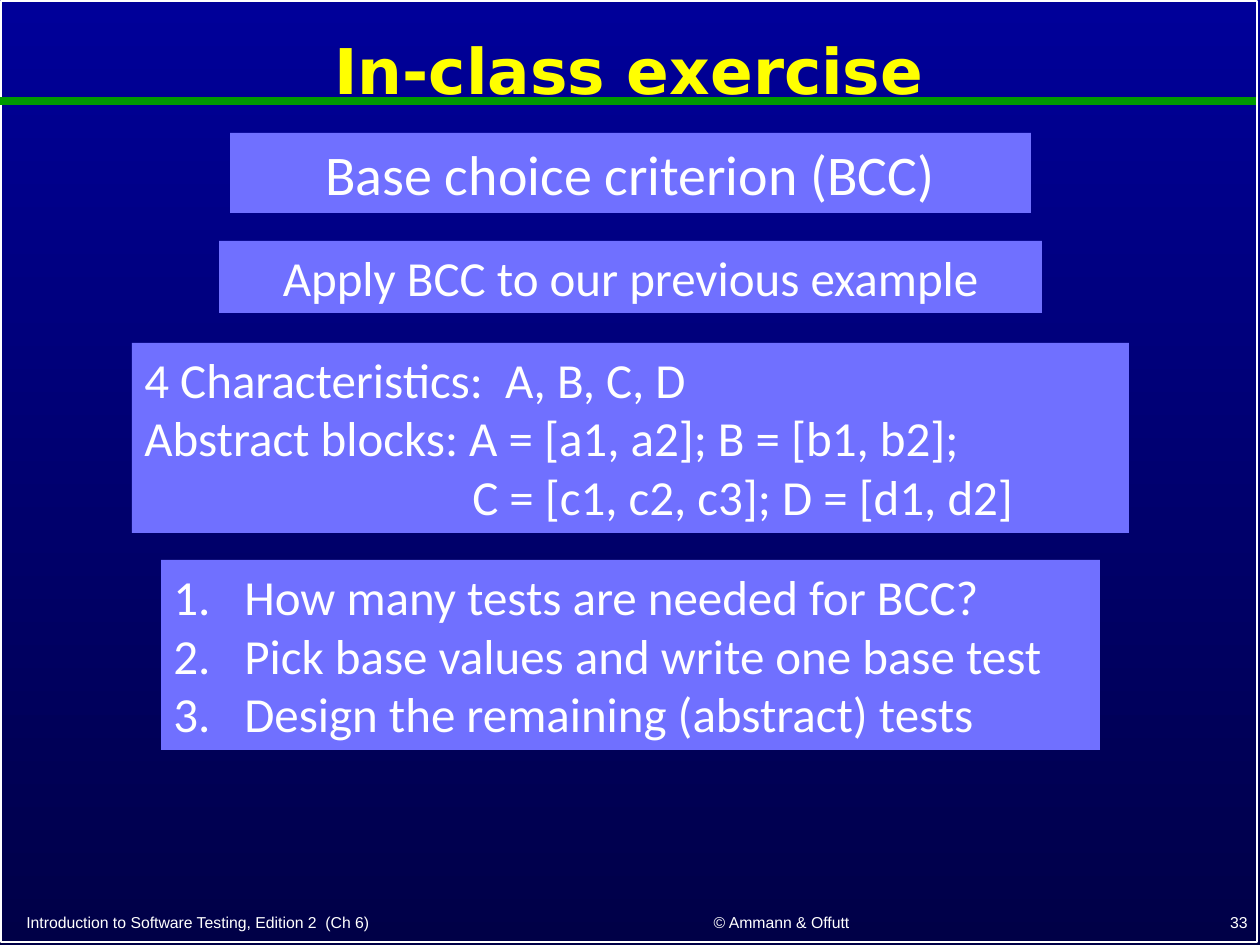
from lxml.etree import SubElement
from pptx import Presentation
from pptx.dml.color import RGBColor
from pptx.enum.shapes import MSO_CONNECTOR, MSO_SHAPE
from pptx.enum.text import MSO_ANCHOR as ANCHOR, MSO_AUTO_SIZE as AUTO, PP_ALIGN as ALIGN
from pptx.oxml.ns import qn
from pptx.util import Emu, Pt

SCALE = 914400 / 126
NAVY = RGBColor(0x00, 0x00, 0x99)
DARK_NAVY = RGBColor(0x00, 0x00, 0x47)
GREEN = RGBColor(0x00, 0x99, 0x00)
YELLOW = RGBColor(0xFF, 0xFF, 0x00)
WHITE = RGBColor(0xFF, 0xFF, 0xFF)
VIOLET = RGBColor(0x70, 0x70, 0xFF)


def px(*values):
    return [Emu(round(v * SCALE)) for v in values]


def write(sp, lines, size, font="Calibri", color=WHITE, bold=False,
          align=ALIGN.LEFT, anchor=ANCHOR.TOP, numbered=False):
    """Fill a shape with one paragraph per line."""
    tf = sp.text_frame
    tf.word_wrap = True
    tf.auto_size = AUTO.NONE
    tf.vertical_anchor = anchor
    for i, line in enumerate(lines):
        p = tf.add_paragraph() if i else tf.paragraphs[0]
        p.alignment = align
        r = p.add_run()
        r.text = line
        r.font.name, r.font.size, r.font.bold = font, Pt(size), bold
        r.font.color.rgb = color
        if numbered:
            pPr = p._p.get_or_add_pPr()
            indent, = px(71)
            pPr.set("marL", str(indent))
            pPr.set("indent", str(-indent))
            SubElement(pPr, qn("a:buFont"), typeface="+mj-lt")
            SubElement(pPr, qn("a:buAutoNum"), type="arabicPeriod")


prs = Presentation()
prs.slide_width, prs.slide_height = px(1260, 945)
s = prs.slides.add_slide(prs.slide_layouts[5])

# Background, frame and rule
fill = s.background.fill
fill.gradient()
fill.gradient_angle = 270
for stop, color in zip(fill.gradient_stops, (NAVY, DARK_NAVY)):
    stop.color.rgb = color

frame = s.shapes.add_shape(MSO_SHAPE.RECTANGLE, *px(1, 1, 1256, 941))
frame.shadow.inherit = False
frame.fill.background()
frame.line.color.rgb = WHITE
frame.line.width = Pt(1)

rule = s.shapes.add_connector(MSO_CONNECTOR.STRAIGHT, *px(0, 101, 1256, 101))
rule.line.color.rgb = GREEN
rule.line.width = Pt(4.5)
SubElement(rule._element.spPr, qn("a:effectLst"))

# Title
title = s.shapes.title
title.left, title.top, title.width, title.height = px(1, 14, 1256, 120)
write(title, ["In-class exercise"], 36, font="DejaVu Sans", color=YELLOW,
      bold=True, align=ALIGN.CENTER, anchor=ANCHOR.MIDDLE)
title.text_frame.paragraphs[0].line_spacing = 0.9

# Footer
footers = [
    ((14, 905, 543, 33), "Introduction to Software Testing, Edition 2  (Ch 6)", ALIGN.LEFT),
    ((582, 904, 399, 34), "© Ammann & Offutt", ALIGN.CENTER),
    ((998, 903, 262, 35), "33", ALIGN.RIGHT),
]
for box, text, align in footers:
    write(s.shapes.add_textbox(*px(*box)), [text], 9, font="Arial",
          align=align, anchor=ANCHOR.BOTTOM)

# Exercise panels
panels = [
    ((230, 133, 801, 80), ["Base choice criterion (BCC)"],
     dict(size=32, align=ALIGN.CENTER)),
    ((219, 241, 823, 72), ["Apply BCC to our previous example"],
     dict(size=28, align=ALIGN.CENTER)),
    ((132, 343, 997, 190),
     ["4 Characteristics:  A, B, C, D",
      "Abstract blocks: A = [a1, a2]; B = [b1, b2];",
      "C = [c1, c2, c3]; D = [d1, d2]"],
     dict(size=28)),
    ((161, 560, 939, 190),
     ["How many tests are needed for BCC?",
      "Pick base values and write one base test",
      "Design the remaining (abstract) tests"],
     dict(size=28, numbered=True)),
]
for box, lines, style in panels:
    sp = s.shapes.add_shape(MSO_SHAPE.RECTANGLE, *px(*box))
    sp.shadow.inherit = False
    sp.fill.solid()
    sp.fill.fore_color.rgb = VIOLET
    sp.line.fill.background()
    write(sp, lines, **style)
    if lines[-1].startswith("C ="):  # line up under the first block list
        hang, = px(328)
        sp.text_frame.paragraphs[-1]._p.get_or_add_pPr().set("marL", str(hang))

prs.save("out.pptx")
